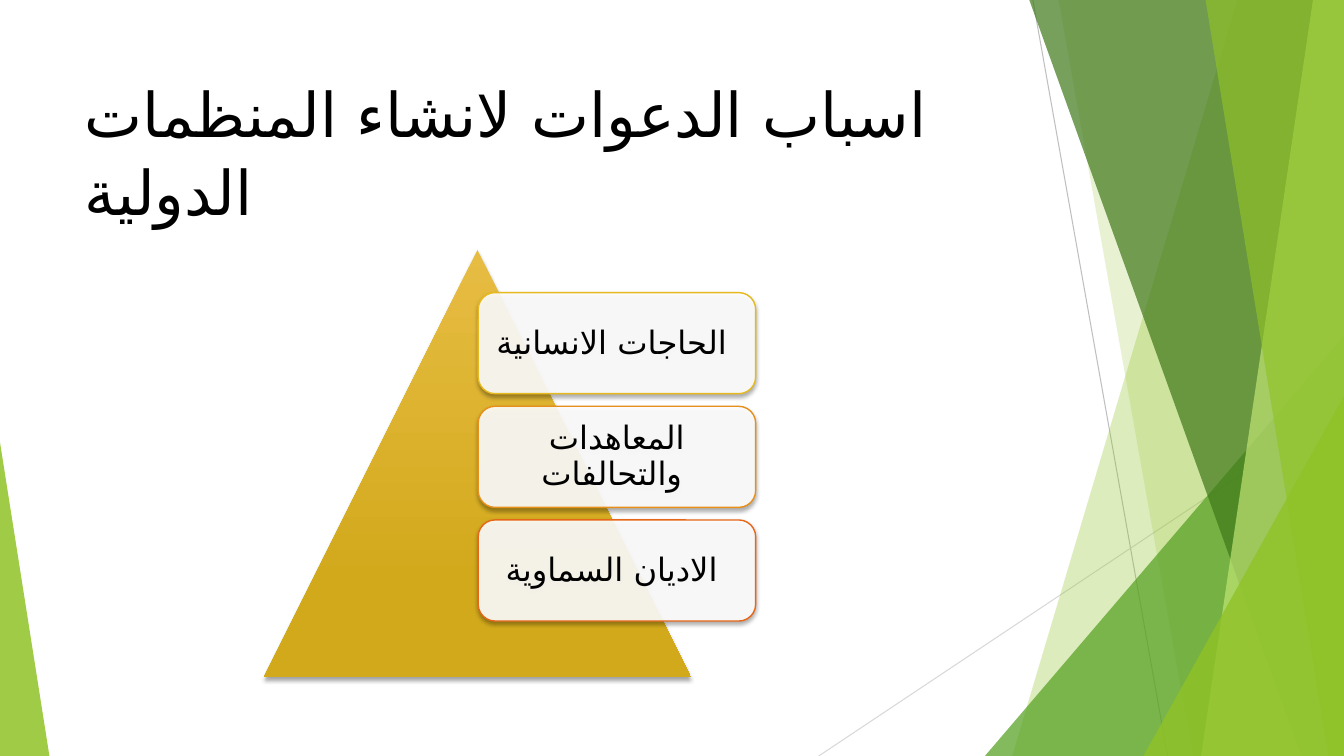
from dataclasses import dataclass

from pptx import Presentation
from pptx.dml.color import RGBColor as RGB
from pptx.enum.shapes import MSO_CONNECTOR as CONN, MSO_SHAPE as SHAPE
from pptx.enum.text import MSO_ANCHOR as ANCHOR, PP_ALIGN as ALIGN
from pptx.oxml.ns import qn
from pptx.util import Pt


@dataclass(frozen=True)
class Theme:
    lime: str = "90C226"
    green: str = "54A021"
    forest: str = "3F7819"
    pale: str = "C0E474"
    white: str = "FFFFFF"
    text: str = "000000"
    gold: tuple = ("E7BC43", "D2A91B")
    title_font: str = "Arial"
    body_font: str = "Cabin"
    arabic_font: str = "DejaVu Sans"
    title_size: int = 44
    body_size: int = 23


THEME = Theme()
WIDTH, HEIGHT = 960, 540
TOP = -0.7

RAYS = [
    ((737.8, 0), (834, HEIGHT), "BFBFBF"),
    ((WIDTH, 290), (584.8, HEIGHT), "D9D9D9"),
]
BANDS_BACK = [
    (884, 723, THEME.lime, 30),
    (756, 852, THEME.lime, 20),
]
BANDS_FRONT = [
    (735, 929.5, THEME.forest, 70),
    (938, 858, THEME.pale, 70),
    (861, 949, THEME.lime, 65),
]
REASONS = [
    ("الحاجات الانسانية ", "E6B91E"),
    ("المعاهدات والتحالفات ", "E6901B"),
    ("الاديان السماوية ", "E76618"),
]


def apply(obj, values):
    for name, value in values.items():
        setattr(obj, name, value)


def add_child(parent, tag, **attrs):
    child = parent.makeelement(qn(tag), {k: str(v) for k, v in attrs.items()})
    parent.append(child)
    return child


def paint(sp, color, opacity):
    sp.shadow.inherit = False
    sp.fill.solid()
    sp.fill.fore_color.rgb = RGB.from_string(color)
    sp.line.fill.background()
    clr = sp.element.spPr.find(qn("a:solidFill"))[0]
    add_child(clr, "a:alpha", val=opacity * 1000)


def add_shadow(sp):
    sp.shadow.inherit = False
    effects = sp.element.spPr.find(qn("a:effectLst"))
    shadow = add_child(effects, "a:outerShdw", blurRad=Pt(3), dist=Pt(2),
                       dir=90 * 60000, rotWithShape=0)
    clr = add_child(shadow, "a:srgbClr", val=THEME.text)
    add_child(clr, "a:alpha", val=35000)


def add_preset(slide, kind, x, y, w, h):
    return slide.shapes.add_shape(kind, Pt(x), Pt(y), Pt(w), Pt(h))


def add_ray(slide, start, end, color):
    line = slide.shapes.add_connector(CONN.STRAIGHT, *map(Pt, start + end))
    line.line.color.rgb = RGB.from_string(color)
    line.line.width = Pt(0.75)
    add_child(line.element.spPr, "a:effectLst")


def add_band(slide, top_x, bottom_x, color, opacity):
    builder = slide.shapes.build_freeform(Pt(top_x), Pt(TOP))
    corners = [(WIDTH, TOP), (WIDTH, HEIGHT), (bottom_x, HEIGHT)]
    builder.add_line_segments([(Pt(x), Pt(y)) for x, y in corners])
    paint(builder.convert_to_shape(), color, opacity)


def add_corner(slide, x, y, w, apex, color, opacity):
    sp = add_preset(slide, SHAPE.ISOSCELES_TRIANGLE, x, y, w, HEIGHT - y)
    sp.adjustments[0] = apex
    paint(sp, color, opacity)


def write(sp, text, font, size, frame, paragraph):
    tf = sp.text_frame
    apply(tf, {"word_wrap": True, **frame})
    p = tf.paragraphs[0]
    apply(p, paragraph)
    r = p.add_run()
    r.text = text
    apply(r.font, {"name": font, "size": Pt(size)})
    r.font.color.rgb = RGB.from_string(THEME.text)
    add_child(r.font._element, "a:cs", typeface=THEME.arabic_font)


def add_title(slide, text):
    sp = slide.shapes.add_textbox(Pt(53.3), Pt(48.2), Pt(646.6), Pt(78.5))
    write(sp, text, THEME.title_font, THEME.title_size,
          {"vertical_anchor": ANCHOR.TOP},
          {"alignment": ALIGN.LEFT, "line_spacing": 1.05})


def add_pyramid(slide):
    sp = add_preset(slide, SHAPE.ISOSCELES_TRIANGLE, 188.6, 178.6, 305, 305)
    sp.fill.gradient()
    sp.fill.gradient_angle = 270
    for stop, color, position in zip(sp.fill.gradient_stops, THEME.gold, (0, 0.78)):
        stop.color.rgb = RGB.from_string(color)
        stop.position = position
    sp.line.fill.background()
    add_shadow(sp)


def add_reason(slide, index, text, border):
    sp = add_preset(slide, SHAPE.ROUNDED_RECTANGLE,
                    341.6, 209 + index * 81.2, 198.2, 72.2)
    paint(sp, THEME.white, 90)
    sp.line.color.rgb = RGB.from_string(border)
    sp.line.width = Pt(1)
    add_shadow(sp)
    sides = ("left", "top", "right", "bottom")
    frame = {f"margin_{side}": Pt(7.2) for side in sides}
    write(sp, text, THEME.body_font, THEME.body_size,
          {"vertical_anchor": ANCHOR.MIDDLE, **frame},
          {"alignment": ALIGN.CENTER, "line_spacing": 0.94})


def add_backdrop(slide):
    for ray in RAYS:
        add_ray(slide, *ray)
    for band in BANDS_BACK:
        add_band(slide, *band)
    add_corner(slide, 703.5, 240, 256.5, 1, THEME.green, 72)
    for band in BANDS_FRONT:
        add_band(slide, *band)
    add_corner(slide, 816.7, 283, 143.3, 1, THEME.lime, 80)
    add_corner(slide, 0, 316, 35.3, 0, THEME.lime, 85)


def main():
    prs = Presentation()
    apply(prs, {"slide_width": Pt(WIDTH), "slide_height": Pt(HEIGHT)})
    slide = prs.slides.add_slide(prs.slide_layouts[6])
    add_backdrop(slide)
    add_title(slide, "اسباب الدعوات لانشاء المنظمات الدولية")
    add_pyramid(slide)
    for index, (text, border) in enumerate(REASONS):
        add_reason(slide, index, text, border)
    prs.save("out.pptx")


if __name__ == "__main__":
    main()
